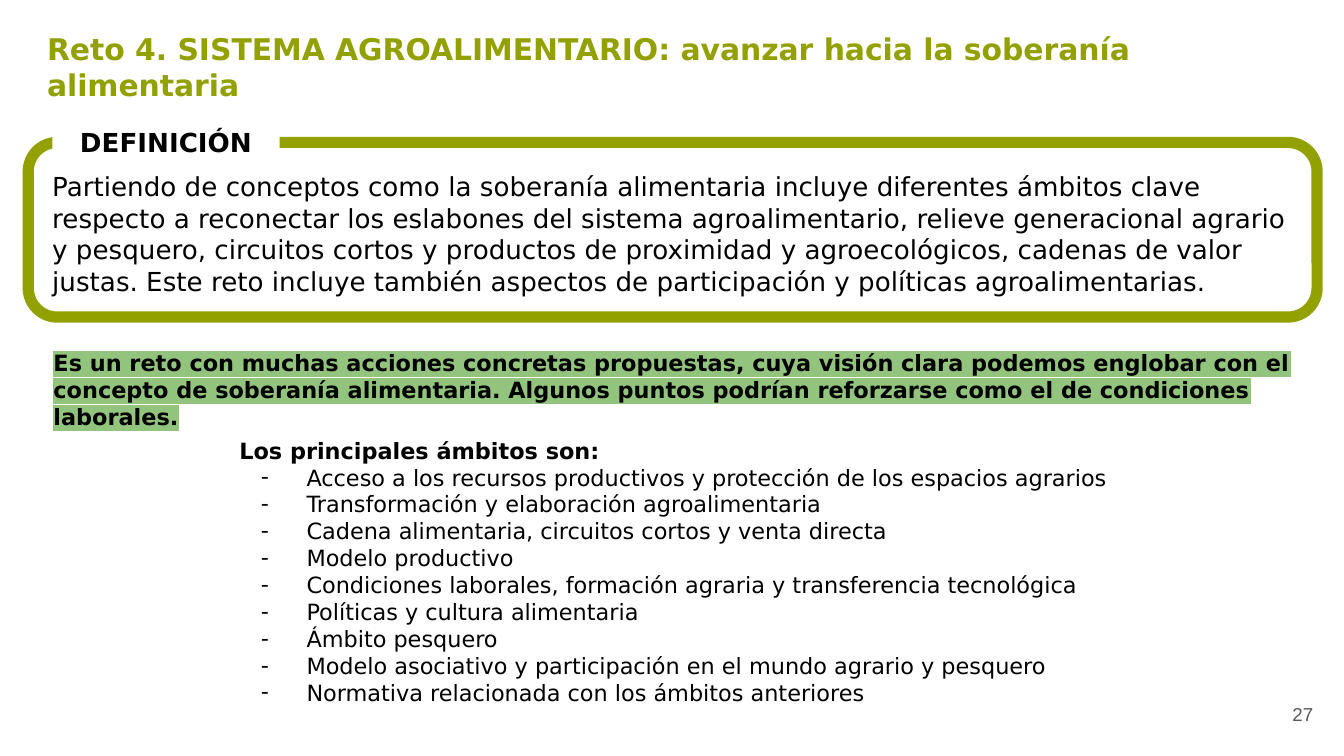
from pptx import Presentation
from pptx.dml.color import RGBColor
from pptx.enum.shapes import MSO_SHAPE
from pptx.enum.text import MSO_ANCHOR, MSO_AUTO_SIZE, PP_ALIGN
from pptx.oxml.ns import qn
from pptx.util import Pt
from lxml.etree import SubElement, Element

OLIVE = RGBColor(0x92, 0xA0, 0x00)
GREEN = RGBColor(0x93, 0xC4, 0x7D)
GREY = RGBColor(0x59, 0x59, 0x59)
BLACK = RGBColor(0, 0, 0)
WHITE = RGBColor(255, 255, 255)
FACE = "DejaVu Sans"
PAD = Pt(7.2)

HEAD = "Reto 4. SISTEMA AGROALIMENTARIO: avanzar hacia la soberanía alimentaria"
MEANING = (
    "Partiendo de conceptos como la soberanía alimentaria incluye diferentes "
    "ámbitos clave respecto a reconectar los eslabones del sistema "
    "agroalimentario, relieve generacional agrario y pesquero, circuitos cortos "
    "y productos de proximidad y agroecológicos, cadenas de valor justas. Este "
    "reto incluye también aspectos de participación y políticas "
    "agroalimentarias."
)
VISION = (
    "Es un reto con muchas acciones concretas propuestas, cuya visión clara "
    "podemos englobar con el concepto de soberanía alimentaria. Algunos puntos "
    "podrían reforzarse como el de condiciones laborales."
)
AREAS = [
    "Acceso a los recursos productivos y protección de los espacios agrarios",
    "Transformación y elaboración agroalimentaria",
    "Cadena alimentaria, circuitos cortos y venta directa",
    "Modelo productivo",
    "Condiciones laborales, formación agraria y transferencia tecnológica",
    "Políticas y cultura alimentaria",
    "Ámbito pesquero",
    "Modelo asociativo y participación en el mundo agrario y pesquero",
    "Normativa relacionada con los ámbitos anteriores",
]


def apply(thing, values):
    for name, value in values.items():
        setattr(thing, name, value)


def place(shape, box):
    apply(shape, dict(zip(("left", "top", "width", "height"), map(Pt, box))))


def setup(frame, **values):
    base = dict(
        word_wrap=True, auto_size=MSO_AUTO_SIZE.NONE, vertical_anchor=MSO_ANCHOR.TOP,
        margin_left=PAD, margin_right=PAD, margin_top=PAD, margin_bottom=PAD,
    )
    apply(frame, base | values)


def write(para, text, size, color=BLACK, bold=False, align=PP_ALIGN.LEFT, face=FACE):
    apply(para, dict(alignment=align, space_before=Pt(0)))
    run = para.add_run()
    run.text = text
    apply(run.font, dict(name=face, size=Pt(size), bold=bold))
    run.font.color.rgb = color
    return run


def mark(run, color):
    """Highlight a run; the element must stand before the typeface."""
    light = Element(qn("a:highlight"))
    SubElement(light, qn("a:srgbClr"), val=str(color))
    run.font._element.find(qn("a:latin")).addprevious(light)


def add_text(slide, box, **values):
    shape = slide.shapes.add_textbox(*map(Pt, box))
    setup(shape.text_frame, **values)
    return shape.text_frame.paragraphs[0]


def add_title(slide, box):
    title = slide.shapes.title
    place(title, box)
    setup(title.text_frame)
    write(title.text_frame.paragraphs[0], HEAD, 16, OLIVE, True)


def add_meaning(slide, box):
    """Rounded frame with its text and a label that breaks the top edge."""
    left, top, width, height = box
    frame = slide.shapes.add_shape(MSO_SHAPE.ROUNDED_RECTANGLE, *map(Pt, box))
    frame.shadow.inherit = False
    frame.fill.background()
    frame.line.color.rgb = OLIVE
    frame.line.width = Pt(6)

    para = add_text(slide, (left + 5.8, top + 8, width - 5.8, height - 11.5))
    write(para, MEANING, 14)

    label = slide.shapes.add_shape(
        MSO_SHAPE.RECTANGLE, *map(Pt, (left + 13, top - 12.2, 121.7, 24.5))
    )
    label.shadow.inherit = False
    label.fill.solid()
    label.fill.fore_color.rgb = WHITE
    label.line.fill.background()
    setup(label.text_frame, margin_top=Pt(3.6), margin_bottom=Pt(3.6))
    write(label.text_frame.paragraphs[0], "DEFINICIÓN", 14, bold=True,
          align=PP_ALIGN.CENTER)


def add_vision(slide, box):
    para = add_text(slide, box)
    para._p.get_or_add_pPr().set("marL", str(Pt(20.9)))
    mark(write(para, VISION, 12, bold=True), GREEN)


def dash(para):
    props = para._p.get_or_add_pPr()
    apply_indent(props, 36, -24.5)
    tint = SubElement(props, qn("a:buClr"))
    SubElement(tint, qn("a:srgbClr"), val=str(BLACK))
    SubElement(props, qn("a:buFont"), typeface=FACE)
    SubElement(props, qn("a:buChar"), char="-")


def apply_indent(props, left, first):
    props.set("marL", str(Pt(left)))
    props.set("indent", str(Pt(first)))


def add_areas(slide, box):
    body = slide.placeholders[1]
    place(body, box)
    frame = body.text_frame
    setup(frame)
    intro = frame.paragraphs[0]
    props = intro._p.get_or_add_pPr()
    apply_indent(props, 0, 0)
    SubElement(props, qn("a:buNone"))
    write(intro, "Los principales ámbitos son:", 12, bold=True)
    for area in AREAS:
        para = frame.add_paragraph()
        dash(para)
        write(para, area, 12)


def add_number(slide, box):
    para = add_text(slide, box, vertical_anchor=MSO_ANCHOR.MIDDLE)
    write(para, "27", 10, GREY, align=PP_ALIGN.RIGHT, face="Arial")


def main():
    deck = Presentation()
    apply(deck, dict(slide_width=Pt(720), slide_height=Pt(405)))
    slide = deck.slides.add_slide(deck.slide_layouts[1])
    add_title(slide, (18, 9.4, 684.7, 53.3))
    add_meaning(slide, (15.1, 76.3, 690.5, 93.6))
    add_vision(slide, (0.7, 180, 720, 58.3))
    add_areas(slide, (121, 226.8, 483.8, 159.8))
    add_number(slide, (667.4, 367.2, 43.2, 31))
    deck.save("out.pptx")


if __name__ == "__main__":
    main()
